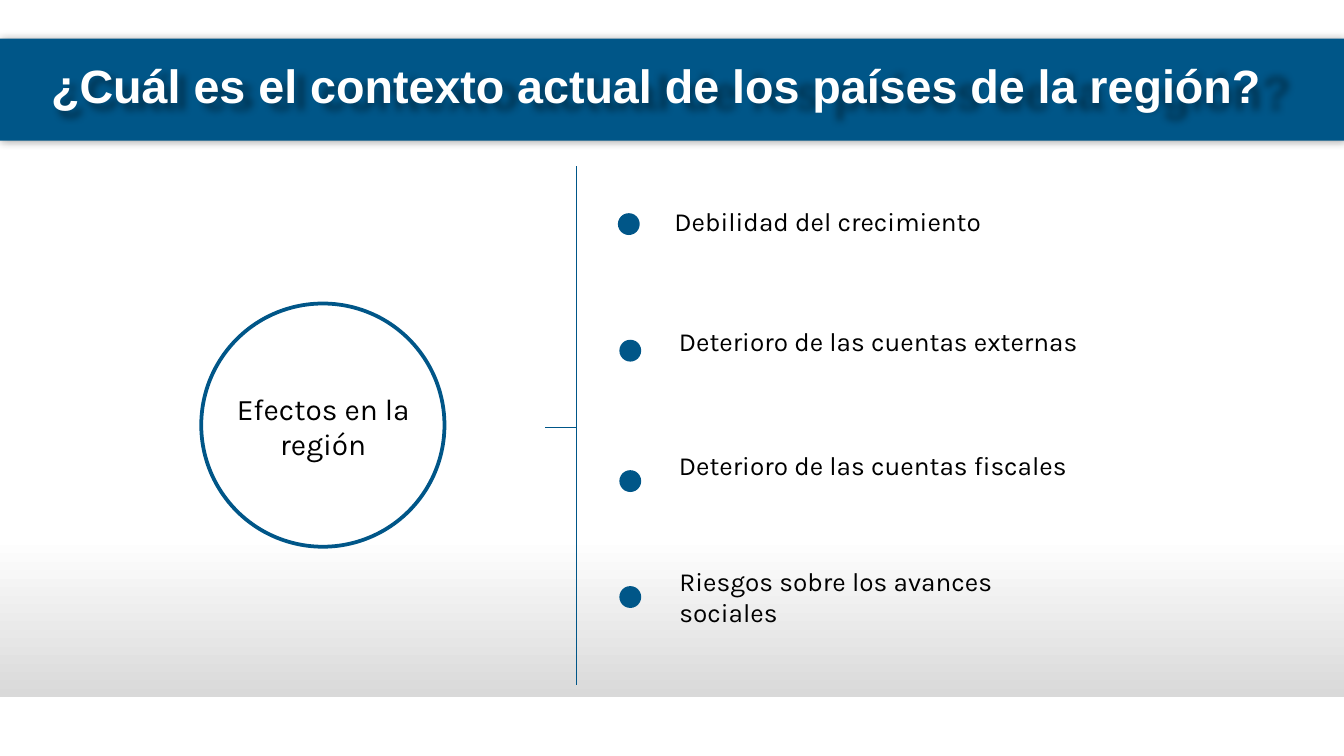
from lxml import etree
from pptx import Presentation
from pptx import util as u
from pptx.dml import color
from pptx.enum import shapes, text
from pptx.oxml import ns

SHAPE = shapes.MSO_SHAPE


def rgb(value):
    return color.RGBColor.from_string(value)


class SlideBuilder:
    blue, white, black, grey = "005688", "FFFFFF", "000000", "D9D9D9"
    title_font, body_font = "Arial", "Karla"

    def __init__(self, slide):
        self.slide = slide

    def effects(self, item):
        return etree.SubElement(item._element.spPr, ns.qn("a:effectLst"))

    def shadow(self, item, blur, alpha, **options):
        outer = etree.SubElement(self.effects(item), ns.qn("a:outerShdw"),
                                 blurRad=str(u.Pt(blur)), **options)
        tone = etree.SubElement(outer, ns.qn("a:srgbClr"), val=self.black)
        etree.SubElement(tone, ns.qn("a:alpha"), val=str(alpha * 1000))

    def shape(self, kind, left, top, width, height, fill=None, line=None, weight=0.75):
        item = self.slide.shapes.add_shape(
            kind, u.Pt(left), u.Pt(top), u.Pt(width), u.Pt(height))
        item.shadow.inherit = False
        if fill:
            item.fill.solid()
            item.fill.fore_color.rgb = rgb(fill)
        else:
            item.fill.background()
        if line:
            item.line.color.rgb = rgb(line)
            item.line.width = u.Pt(weight)
        else:
            item.line.fill.background()
        return item

    def gradient(self, left, top, width, height):
        item = self.shape(SHAPE.RECTANGLE, left, top, width, height)
        item.fill.gradient()
        item.fill.gradient_angle = 90
        for stop, tone in zip(item.fill.gradient_stops, (self.grey, self.white)):
            stop.color.rgb = rgb(tone)

    def set_text(self, item, words, size, font, tone, align=text.PP_ALIGN.LEFT,
                 anchor=text.MSO_ANCHOR.TOP, bold=False):
        frame = item.text_frame
        frame.text = words
        frame.word_wrap = True
        frame.vertical_anchor = anchor
        para = frame.paragraphs[0]
        para.alignment = align
        for span in para.runs:
            span.font.name = font
            span.font.size = u.Pt(size)
            span.font.bold = bold
            span.font.color.rgb = rgb(tone)
        return para

    def title(self, words, left, top, width, height):
        item = self.slide.shapes.title
        item.left, item.top = u.Pt(left), u.Pt(top)
        item.width, item.height = u.Pt(width), u.Pt(height)
        para = self.set_text(item, words, 25, self.title_font, self.white, bold=True)
        para.line_spacing = 0.8
        item.text_frame.auto_size = text.MSO_AUTO_SIZE.NONE
        self.shadow(item, 4, 40, dist=str(u.Pt(3)), dir="2700000",
                    sx="102000", sy="102000", algn="tl")
        # Bring the title in front of the bands
        self.slide.shapes._spTree.append(item._element)

    def label(self, words, left, top, width, height):
        box = self.slide.shapes.add_textbox(
            u.Pt(left), u.Pt(top), u.Pt(width), u.Pt(height))
        self.set_text(box, words, 14, self.body_font, self.black)

    def line(self, x1, y1, x2, y2):
        item = self.slide.shapes.add_connector(
            shapes.MSO_CONNECTOR.STRAIGHT, u.Pt(x1), u.Pt(y1), u.Pt(x2), u.Pt(y2))
        item.line.color.rgb = rgb(self.blue)
        item.line.width = u.Pt(0.75)
        self.effects(item)


def main():
    deck = Presentation()
    deck.slide_width, deck.slide_height = u.Pt(720), u.Pt(405)
    page = SlideBuilder(deck.slides.add_slide(deck.slide_layouts[5]))

    # Background bands and title
    page.gradient(0, 287.3, 720, 86.4)
    band = page.shape(SHAPE.RECTANGLE, 0, 20.7, 720, 54.7, fill=page.blue)
    band.shadow.inherit = True
    page.shadow(band, 5, 40)
    page.title("¿Cuál es el contexto actual de los países de la región?",
               20.2, 32.4, 680.4, 37.4)

    # Circled topic
    topic = page.shape(SHAPE.RECTANGLE, 105.1, 205.2, 136.1, 46.1, line=page.white)
    page.set_text(topic, "Efectos en la región", 16, page.body_font, page.black,
                  text.PP_ALIGN.CENTER, text.MSO_ANCHOR.MIDDLE)
    page.shape(SHAPE.OVAL, 107.8, 162.6, 130.3, 130.3, line=page.blue, weight=2)

    # Bracket
    page.line(292.1, 229, 308.9, 229)
    page.line(308.9, 89.2, 308.9, 367.1)

    # Effects: words, label left, top and width, dot left and top
    effects = [
        ("Debilidad del crecimiento", 354.2, 106.6, 260.6, 331, 114.2),
        ("Deterioro de las cuentas externas", 356.6, 170.8, 247, 331.8, 182),
        ("Deterioro de las cuentas fiscales", 356.6, 237, 233.3, 331.8, 251.9),
        ("Riesgos sobre los avances sociales", 356.9, 299.3, 233.3, 331.8, 314),
    ]
    for words, left, top, width, dot_left, dot_top in effects:
        page.label(words, left, top, width, 24.5)
        page.shape(SHAPE.OVAL, dot_left, dot_top, 11.7, 11.7, fill=page.blue)

    deck.save("out.pptx")


if __name__ == "__main__":
    main()
